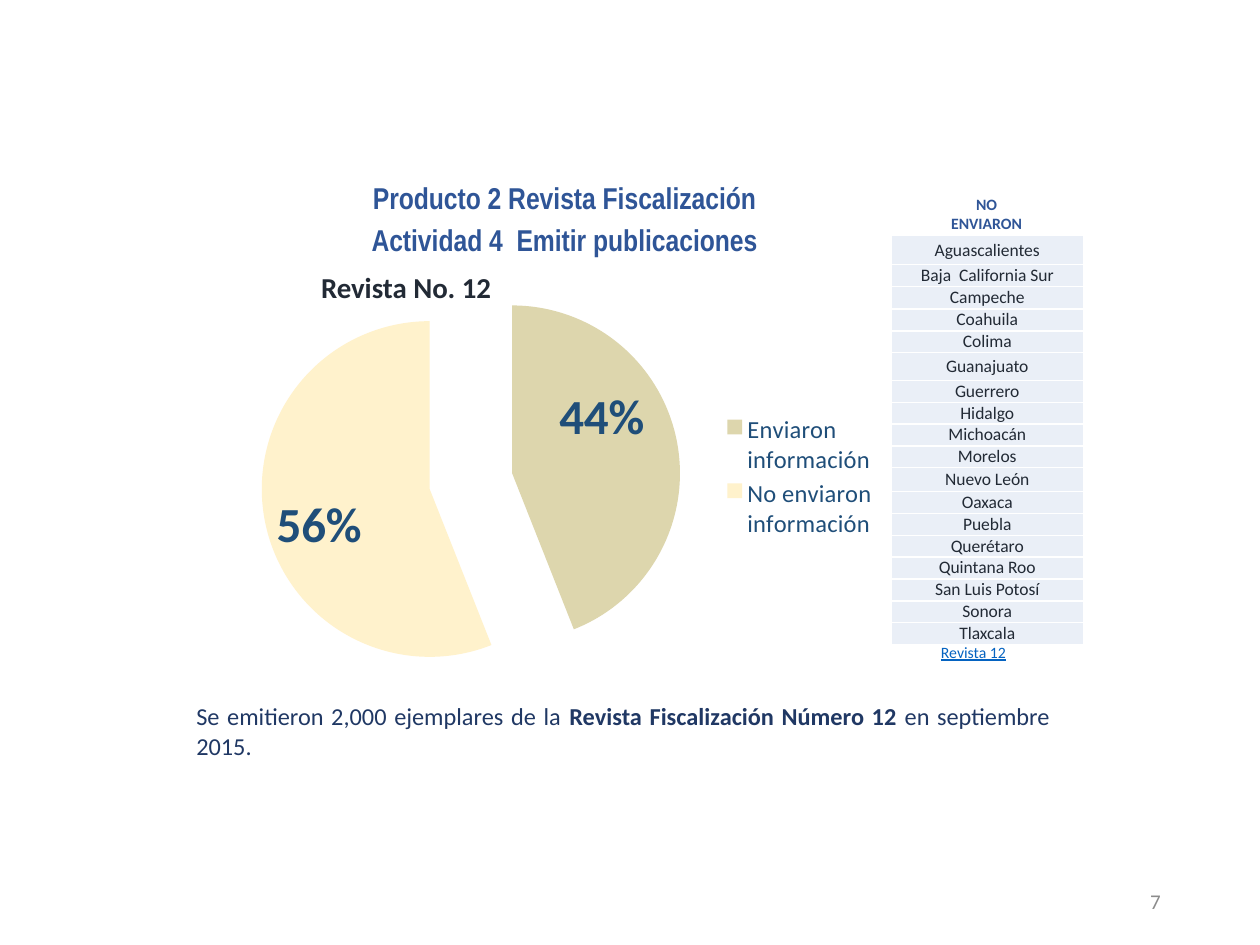
import pptx
import pptx.chart.data
import pptx.dml.color
import pptx.enum.chart
import pptx.enum.text
import pptx.oxml
import pptx.util
from pptx.util import Inches

RGBColor = pptx.dml.color.RGBColor
PP_ALIGN = pptx.enum.text.PP_ALIGN
ANCHOR = pptx.enum.text.MSO_ANCHOR
NS = 'xmlns:{0}="http://schemas.openxmlformats.org/drawingml/2006/{1}"'

WHITE = RGBColor(0xFF, 0xFF, 0xFF)
BLUE = RGBColor(0x2F, 0x55, 0x97)
NAVY = RGBColor(0x20, 0x38, 0x64)
CHART_BLUE = RGBColor(0x1F, 0x4E, 0x79)
DARK = RGBColor(0x22, 0x2A, 0x35)
GRAY = RGBColor(0x8C, 0x8C, 0x8C)
LINK_BLUE = RGBColor(0x05, 0x63, 0xC1)
CELL_FILL = RGBColor(0xEA, 0xEF, 0xF7)
SLICE_COLORS = [RGBColor(0xDD, 0xD6, 0xAD), RGBColor(0xFF, 0xF2, 0xCC)]

STATES = ["Aguascalientes", "Baja  California Sur", "Campeche", "Coahuila", "Colima",
          "Guanajuato", "Guerrero", "Hidalgo", "Michoacán", "Morelos", "Nuevo León",
          "Oaxaca", "Puebla", "Querétaro", "Quintana Roo", "San Luis Potosí",
          "Sonora", "Tlaxcala"]
TABLE_HEIGHT = 3.25
TALL_ROWS = {"Aguascalientes": 0.23, "Campeche": 0.18, "Guanajuato": 0.22, "Nuevo León": 0.19}
ROW_HEIGHT = (TABLE_HEIGHT - sum(TALL_ROWS.values())) / (len(STATES) - len(TALL_ROWS))


def add_run(p, text, size, color, bold=False, font="Calibri"):
    r = p.add_run()
    r.text = text
    r.font.size = pptx.util.Pt(size)
    r.font.name = font
    r.font.bold = bold
    r.font.color.rgb = color
    return r


def manual_layout(x, y, w=None, h=None, inner=False):
    """Chart layout in fractions of the chart; without w and h it is an offset."""
    parts = []
    if inner:
        parts.append('<c:layoutTarget val="inner"/>')
    if w is not None:
        parts.append('<c:xMode val="edge"/><c:yMode val="edge"/>')
    for tag, value in zip("xywh", (x, y, w, h)):
        if value is not None:
            parts.append(f'<c:{tag} val="{value}"/>')
    return pptx.oxml.parse_xml(f'<c:layout {NS.format("c", "chart")}><c:manualLayout>'
                               f'{"".join(parts)}</c:manualLayout></c:layout>')


prs = pptx.Presentation()
prs.slide_width, prs.slide_height = Inches(10), Inches(7.5)
s = prs.slides.add_slide(prs.slide_layouts[5])

# Title
title = s.shapes.title
title.left, title.top, title.width, title.height = map(Inches, (2.28, 1.5, 4.4, 0.59))
tf = title.text_frame
tf.auto_size = pptx.enum.text.MSO_AUTO_SIZE.NONE
tf.vertical_anchor = ANCHOR.TOP
tf.margin_left = tf.margin_right = Inches(0.07)
tf.margin_top = tf.margin_bottom = Inches(0.04)
for i, line in enumerate(["Producto 2 Revista Fiscalización", "Actividad 4  Emitir publicaciones"]):
    p = tf.add_paragraph() if i else tf.paragraphs[0]
    p.alignment = PP_ALIGN.CENTER
    p.line_spacing = pptx.util.Pt(12)
    p.space_before = pptx.util.Pt(12 * i)
    add_run(p, line, 17.2, BLUE, True, "Arial Narrow")

# Table of states
table = s.shapes.add_table(len(STATES), 1, Inches(7.07), Inches(1.87),
                           Inches(1.53), Inches(TABLE_HEIGHT)).table
table.first_row = table.horz_banding = False
for row, state in zip(table.rows, STATES):
    row.height = Inches(TALL_ROWS.get(state, ROW_HEIGHT))
    cell = row.cells[0]
    cell.margin_left = cell.margin_right = Inches(0.01)
    cell.margin_top = cell.margin_bottom = 0
    cell.vertical_anchor = ANCHOR.MIDDLE
    p = cell.text_frame.paragraphs[0]
    p.alignment = PP_ALIGN.CENTER
    add_run(p, state, 10, DARK)
    cell.fill.solid()
    cell.fill.fore_color.rgb = CELL_FILL
    tc_pr = cell._tc.get_or_add_tcPr()
    for i, side in enumerate("LRTB"):
        tc_pr.insert(i, pptx.oxml.parse_xml(
            f'<a:ln{side} {NS.format("a", "main")} w="12700"><a:solidFill>'
            f'<a:srgbClr val="{WHITE}"/></a:solidFill></a:ln{side}>'))

# Text boxes: place, alignment, runs of (text, size, colour, bold)
boxes = [
    ((7.06, 6.95, 2.25, 0.4), PP_ALIGN.RIGHT, [("7", 12, GRAY, False)]),
    ((7.36, 1.5, 0.94, 0.56), PP_ALIGN.CENTER, [("NO ENVIARON", 9, BLUE, True)]),
    ((2.45, 2.09, 1.77, 0.38), PP_ALIGN.LEFT, [("Revista No. 12", 16.5, DARK, True)]),
    ((1.46, 5.52, 6.97, 0.57), PP_ALIGN.JUSTIFY,
     [("Se emitieron 2,000 ejemplares de la ", 13.9, NAVY, False),
      ("Revista Fiscalización Número 12 ", 13.9, NAVY, True),
      ("en septiembre 2015.", 13.9, NAVY, False)]),
    ((7.37, 5.05, 0.73, 0.25), PP_ALIGN.LEFT, [("Revista 12", 9, LINK_BLUE, False)]),
]
for place, align, runs in boxes:
    tf = s.shapes.add_textbox(*map(Inches, place)).text_frame
    tf.word_wrap = runs[0][0] != "Revista 12"
    p = tf.paragraphs[0]
    p.alignment = align
    for run in runs:
        r = add_run(p, *run)
        r.font.underline = run[2] == LINK_BLUE
    if runs[0][0] == "7":
        tf.vertical_anchor = ANCHOR.MIDDLE

# Pie chart
data = pptx.chart.data.CategoryChartData()
data.categories = ["Enviaron información", "No enviaron información"]
data.add_series("Series 1", (44, 56))
chart = s.shapes.add_chart(pptx.enum.chart.XL_CHART_TYPE.PIE, Inches(1.41), Inches(2.05),
                           Inches(5.61), Inches(3.47), data).chart
chart.has_title = False
chart.font.name = "Calibri"
chart.font.size = pptx.util.Pt(10)
chart.has_legend = True
legend = chart.legend
legend.position = pptx.enum.chart.XL_LEGEND_POSITION.RIGHT
legend.include_in_layout = False
legend.font.size = pptx.util.Pt(14)
legend.font.color.rgb = CHART_BLUE
legend._element.xpath("c:legendPos")[0].addnext(manual_layout(0.77, 0.35, 0.22, 0.3))

plot_area = chart._chartSpace.chart.plotArea
for layout in plot_area.xpath("c:layout"):
    plot_area.remove(layout)
plot_area.insert(0, manual_layout(0.05, 0.03, 0.73, 0.96, inner=True))

plot = chart.plots[0]
plot.vary_by_categories = True
series = plot.series[0]
label_offsets = [(0.01, -0.09), (-0.04, 0.05)]
for i, (color, offset) in enumerate(zip(SLICE_COLORS, label_offsets)):
    point = series.points[i]
    point.format.fill.solid()
    point.format.fill.fore_color.rgb = color
    label = point.data_label
    label.font.size = pptx.util.Pt(28)
    label.font.bold = True
    label.font.color.rgb = CHART_BLUE
    label.position = pptx.enum.chart.XL_LABEL_POSITION.CENTER
    d_lbl = series._element.xpath(f"c:dLbls/c:dLbl[c:idx/@val='{i}']")[0]
    d_lbl.xpath("c:idx")[0].addnext(manual_layout(*offset))
    d_lbl.xpath("c:showVal")[0].set("val", "0")
    d_lbl.xpath("c:showPercent")[0].set("val", "1")
series._element.xpath("c:dPt")[0].addprevious(
    pptx.oxml.parse_xml(f'<c:explosion {NS.format("c", "chart")} val="25"/>'))

prs.save("out.pptx")
